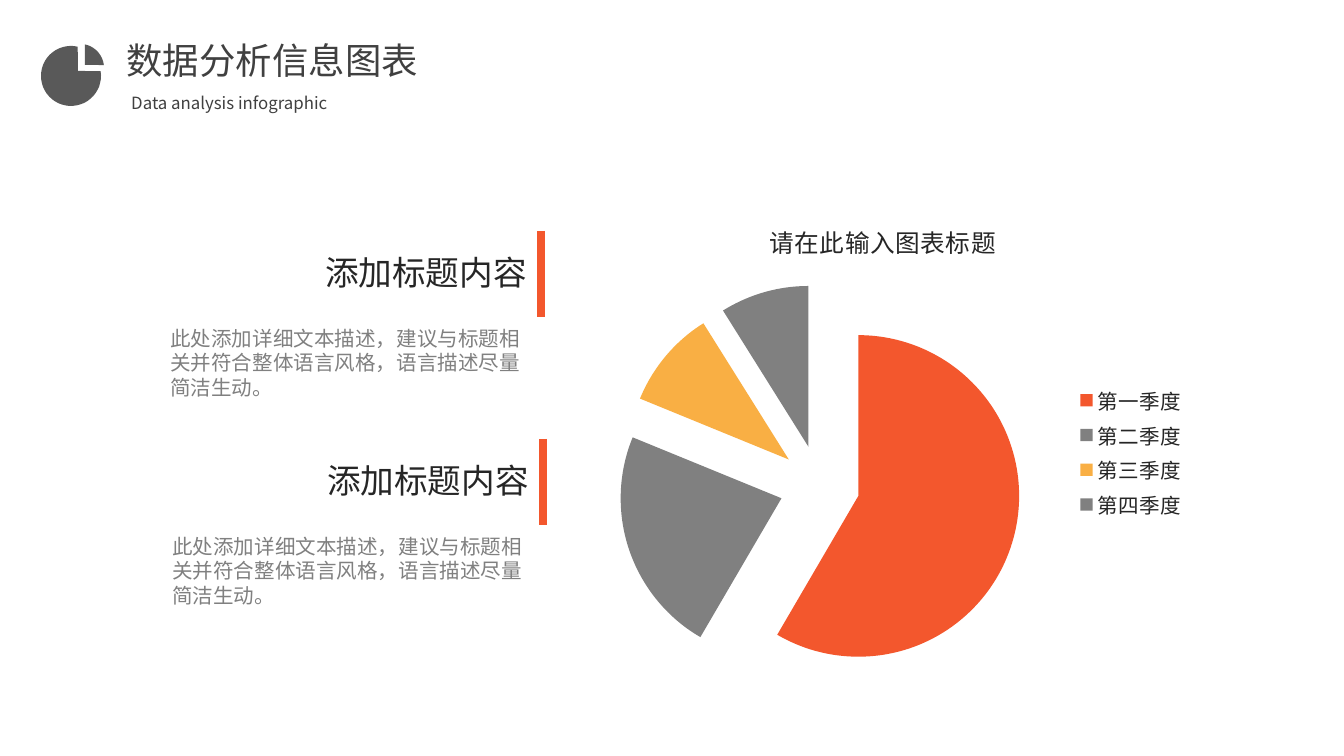
import math

from lxml import etree
from pptx import Presentation
from pptx import util as u
from pptx.chart.data import CategoryChartData
from pptx.dml.color import RGBColor
from pptx.enum import chart as ch, lang, shapes, text
from pptx.oxml import parse_xml
from pptx.oxml.ns import nsdecls, qn

PX = 914400 / 134.4
ORANGE = RGBColor(0xF3, 0x57, 0x2D)
YELLOW = RGBColor(0xF9, 0xAF, 0x44)
GREY = RGBColor(0x80, 0x80, 0x80)
INK = RGBColor(0x26, 0x26, 0x26)
HEADER = RGBColor(0x40, 0x40, 0x40)
ICON = RGBColor(0x59, 0x59, 0x59)
CJK = "Noto Sans CJK SC"


def px(*values):
    return [u.Emu(round(v * PX)) for v in values]


def write(sp, words, size, color, font="Arial", align=text.PP_ALIGN.LEFT, wrap=False):
    tf = sp.text_frame
    tf.word_wrap = wrap
    tf.auto_size = text.MSO_AUTO_SIZE.NONE
    tf.vertical_anchor = text.MSO_ANCHOR.TOP
    p = tf.paragraphs[0]
    p.alignment = align
    r = p.add_run()
    r.text = words
    r.font.name, r.font.size = font, u.Pt(size)
    r.font.color.rgb = color
    r.font.language_id = lang.MSO_LANGUAGE_ID.SIMPLIFIED_CHINESE
    return p


prs = Presentation()
prs.slide_width, prs.slide_height = px(1344, 756)
s = prs.slides.add_slide(prs.slide_layouts[5])

# Header
title = s.shapes.title
title.left, title.top, title.width, title.height = px(113, 31, 321, 58)
write(title, "数据分析信息图表", 19.5, HEADER, CJK)
write(s.shapes.add_textbox(*px(118, 86, 239, 34)),
      "Data analysis infographic", 9, HEADER, CJK)

# Pie icon: corner, centre, radius, start and end angle of each piece
outlines = []
for corner, cx, cy, radius, start, end in [
    ((78, 71), 71, 76, 30, -9, 283),
    ((85, 65), 80, 68, 24, -78, -7),
]:
    steps = 40
    angles = [math.radians(start + (end - start) * i / steps) for i in range(steps + 1)]
    arc = [(cx + radius * math.cos(a), cy + radius * math.sin(a)) for a in angles]
    outlines.append([(x * 10, y * 10) for x, y in [corner] + arc])
builder = s.shapes.build_freeform(*outlines[0][0], scale=PX / 10)
builder.add_line_segments(outlines[0][1:])
builder.move_to(*outlines[1][0])
builder.add_line_segments(outlines[1][1:])
icon = builder.convert_to_shape()
icon.shadow.inherit = False
icon.fill.solid()
icon.fill.fore_color.rgb = ICON
icon.line.fill.background()

# Two text blocks, each with a bar on its right
for dx, dy in [(0, 0), (2, 208)]:
    bar = s.shapes.add_connector(
        shapes.MSO_CONNECTOR.STRAIGHT, *px(541 + dx, 231 + dy, 541 + dx, 317 + dy))
    bar.line.color.rgb = ORANGE
    bar.line.width = u.Pt(4.5)
    etree.SubElement(bar._element.spPr, qn("a:effectLst"))
    write(s.shapes.add_textbox(*px(309 + dx, 245 + dy, 231, 54)),
          "添加标题内容", 18, INK, align=text.PP_ALIGN.RIGHT)
    p = write(s.shapes.add_textbox(*px(157 + dx, 319 + dy, 382, 89)),
              "此处添加详细文本描述，建议与标题相关并符合整体语言风格，语言描述尽量简洁生动。",
              11, GREY, wrap=True)
    p.space_before = u.Pt(2.2)

# Exploded pie chart
data = CategoryChartData()
data.categories = ["第一季度", "第二季度", "第三季度", "第四季度"]
data.add_series("Series 1", [59, 23, 10, 9])
chart = s.shapes.add_chart(ch.XL_CHART_TYPE.PIE, *px(566, 198, 634, 509), data).chart
chart.font.name, chart.font.size = "Arial", u.Pt(11)
chart.font.color.rgb = INK
chart.font.language_id = lang.MSO_LANGUAGE_ID.SIMPLIFIED_CHINESE

p = chart.chart_title.text_frame.paragraphs[0]
r = p.add_run()
r.text = "请在此输入图表标题"
r.font.name, r.font.size, r.font.bold = "Arial", u.Pt(13.2), False
r.font.color.rgb = INK
r.font.language_id = lang.MSO_LANGUAGE_ID.SIMPLIFIED_CHINESE

chart.has_legend = True
chart.legend.position = ch.XL_LEGEND_POSITION.RIGHT
chart.legend.include_in_layout = False

plot = chart.plots[0]
plot.vary_by_categories = True
series = plot.series[0]
for i, color in enumerate([ORANGE, GREY, YELLOW, GREY]):
    fill = series.points[i].format.fill
    fill.solid()
    fill.fore_color.rgb = color
series._element.find(qn("c:dPt")).addprevious(
    parse_xml(f'<c:explosion {nsdecls("c")} val="25"/>'))

# Plot area as shares of the chart frame
area = chart._chartSpace.chart.plotArea
for old in area.findall(qn("c:layout")):
    area.remove(old)
shares = "".join(f'<c:{k} val="{v}"/>' for k, v in
                 [("x", 0.08), ("y", 0.17), ("w", 0.64), ("h", 0.79)])
area.insert(0, parse_xml(
    f'<c:layout {nsdecls("c")}><c:manualLayout><c:layoutTarget val="inner"/>'
    f'<c:xMode val="edge"/><c:yMode val="edge"/>{shares}</c:manualLayout></c:layout>'))

prs.save("out.pptx")
